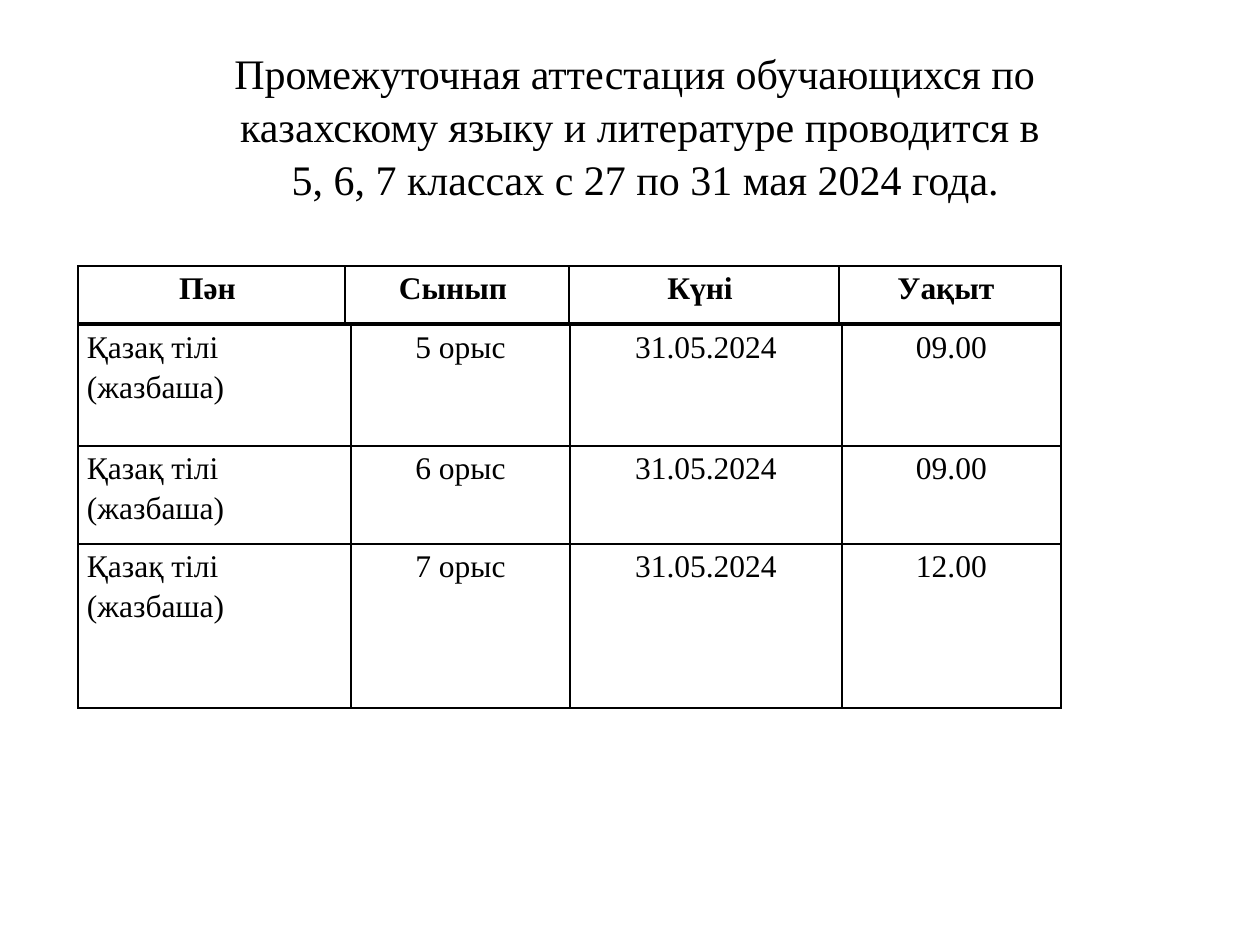
from lxml.etree import SubElement
from pptx import Presentation
from pptx.dml.color import RGBColor
from pptx.enum.text import MSO_ANCHOR, MSO_AUTO_SIZE, PP_ALIGN
from pptx.oxml.ns import qn
from pptx.util import Emu, Pt

COLORS = {"ink": "000000"}
FONT = "Times New Roman"
SCALE = 914400 / 126


def px(length):
    return Emu(round(length * SCALE))


def style(para, size, bold, align, spacing):
    para.alignment = align
    para.line_spacing = spacing
    for span in para.runs:
        span.font.name = FONT
        span.font.size = Pt(size)
        span.font.bold = bold
        span.font.color.rgb = RGBColor.from_string(COLORS["ink"])


deck = Presentation()
deck.slide_width, deck.slide_height = px(1260), px(945)
page = deck.slides.add_slide(deck.slide_layouts[5])

# Title
title = page.shapes.title
title.left, title.top, title.width, title.height = px(49), px(39), px(1182), px(165)
title.text_frame.text = (
    "Промежуточная аттестация обучающихся по \n"
    "казахскому языку и литературе проводится в\n"
    " 5, 6, 7 классах с 27 по 31 мая 2024 года."
)
title.text_frame.word_wrap = True
title.text_frame.auto_size = MSO_AUTO_SIZE.NONE
title.text_frame.vertical_anchor = MSO_ANCHOR.TOP
for para in title.text_frame.paragraphs:
    style(para, 24, False, PP_ALIGN.CENTER, 1.05)

# Schedule body and its separate heading row
subject, date = "Қазақ тілі (жазбаша)", "31.05.2024"
schedule = [
    (subject, "5 орыс", date, "09.00"),
    (subject, "6 орыс", date, "09.00"),
    (subject, "7 орыс", date, "12.00"),
]
headings = [("Пән ", "Сынып ", "Күні ", "Уақыт ")]
tables = [
    (schedule, 325, [273, 219, 272, 219], [121, 98, 164], False),
    (headings, 266, [267, 224, 270, 222], [57], True),
]

for rows, top, widths, heights, is_heading in tables:
    table = page.shapes.add_table(
        len(rows), len(widths), px(78), px(top), px(sum(widths)), px(sum(heights))
    ).table
    table.first_row = is_heading
    table.horz_banding = False
    for column, width in zip(table.columns, widths):
        column.width = px(width)
    for row, height, texts in zip(table.rows, heights, rows):
        row.height = px(height)
        for index, (cell, text) in enumerate(zip(row.cells, texts)):
            cell.text_frame.text = text
            cell.margin_left = cell.margin_right = px(9)
            cell.margin_top = cell.margin_bottom = 0
            left_aligned = index == 0 and not is_heading
            align = PP_ALIGN.LEFT if left_aligned else PP_ALIGN.CENTER
            style(cell.text_frame.paragraphs[0], 18, is_heading, align, 1.15)

            # Borders come before the fill in the cell properties
            properties = cell._tc.get_or_add_tcPr()
            for side in ("a:lnL", "a:lnR", "a:lnT", "a:lnB"):
                line = SubElement(properties, qn(side), w=str(Pt(1)))
                fill = SubElement(line, qn("a:solidFill"))
                SubElement(fill, qn("a:srgbClr"), val=COLORS["ink"])
            cell.fill.background()

deck.save("out.pptx")
